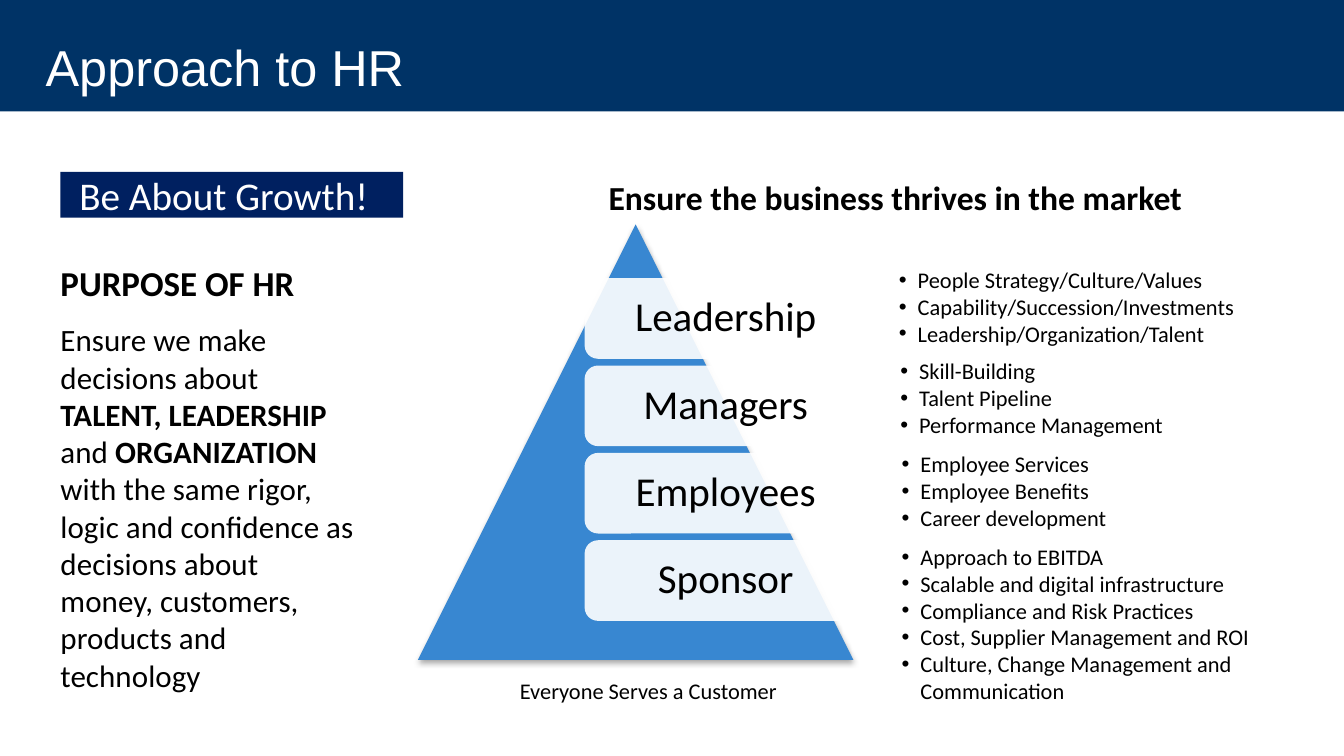
"""Build the "Approach to HR" slide with a four-level pyramid."""
import pptx
import pptx.dml.color
import pptx.enum.shapes
import pptx.enum.text
import pptx.oxml
import pptx.oxml.ns
import pptx.util
from lxml import etree

Inches = pptx.util.Inches
Pt = pptx.util.Pt
RGBColor = pptx.dml.color.RGBColor
SHAPE = pptx.enum.shapes.MSO_SHAPE
ALIGN = pptx.enum.text.PP_ALIGN
ANCHOR = pptx.enum.text.MSO_ANCHOR
qn = pptx.oxml.ns.qn

HEADER_BLUE = RGBColor(0x00, 0x33, 0x66)
BADGE_NAVY = RGBColor(0x00, 0x20, 0x60)
PYRAMID_BLUE = RGBColor(0x38, 0x87, 0xD1)
WHITE = RGBColor(0xFF, 0xFF, 0xFF)
BLACK = RGBColor(0x00, 0x00, 0x00)

deck = pptx.Presentation()
deck.slide_width = Inches(10)
deck.slide_height = Inches(10) * 9 // 16
page = deck.slides.add_slide(deck.slide_layouts[6])


def add_box(left, top, width, height, shape=None, fill=None, margins=(0.1, 0.05)):
    """Add a text box, or a filled preset shape, with side and top margins."""
    place = [Inches(length) for length in (left, top, width, height)]
    if shape is None:
        box = page.shapes.add_textbox(*place)
    else:
        box = page.shapes.add_shape(shape, *place)
        box.shadow.inherit = False
        box.fill.solid()
        box.fill.fore_color.rgb = fill
        box.line.fill.background()
    frame = box.text_frame
    frame.word_wrap = True
    frame.margin_left = frame.margin_right = Inches(margins[0])
    frame.margin_top = frame.margin_bottom = Inches(margins[1])
    return box


def add_span(para, text, size, color=BLACK, bold=False, font="Calibri"):
    """Add one formatted run to a paragraph."""
    span = para.add_run()
    span.text = text
    span.font.name = font
    span.font.size = Pt(size)
    span.font.bold = bold
    span.font.color.rgb = color


add_box(0, 0, 10, 0.83, SHAPE.RECTANGLE, HEADER_BLUE)
title = add_box(0.34, 0.27, 8.07, 0.45, margins=(0, 0))
add_span(title.text_frame.paragraphs[0], "Approach to HR", 27, WHITE, font="Arial")

purpose = add_box(0.45, 1.95, 2.19, 3.24, margins=(0, 0))
add_span(purpose.text_frame.paragraphs[0], "PURPOSE OF HR", 18.7, bold=True)
para = purpose.text_frame.add_paragraph()
para.space_before = Pt(9)
for text, bold in (
    ("Ensure we make decisions about ", False),
    ("TALENT, LEADERSHIP", True),
    (" and ", False),
    ("ORGANIZATION", True),
    (" with the same rigor, logic and confidence as decisions about money, "
     "customers, products and technology", False),
):
    add_span(para, text, 16.65, bold=bold)

badge = add_box(0.45, 1.28, 2.55, 0.34, SHAPE.RECTANGLE, BADGE_NAVY, (0, 0))
badge.text_frame.margin_left = Inches(0.14)
badge.text_frame.vertical_anchor = ANCHOR.MIDDLE
para = badge.text_frame.paragraphs[0]
para.alignment = ALIGN.LEFT
add_span(para, "Be About Growth!", 21, WHITE)

pyramid = add_box(3.11, 1.67, 3.24, 3.24, SHAPE.ISOSCELES_TRIANGLE, PYRAMID_BLUE)
effects = pyramid.element.spPr.find(qn("a:effectLst"))
shadow = etree.SubElement(
    effects, qn("a:outerShdw"), blurRad=str(Pt(3.1)), dist=str(Pt(1.8)),
    dir="5400000", rotWithShape="0")
shade = etree.SubElement(shadow, qn("a:srgbClr"), val=str(BLACK))
etree.SubElement(shade, qn("a:alpha"), val="35000")

for level, name in enumerate(("Leadership", "Managers", "Employees", "Sponsor")):
    band = add_box(4.35, 2.07 + 0.65 * level, 2.1, 0.6,
                   SHAPE.ROUNDED_RECTANGLE, WHITE, (0.09, 0.09))
    tint = band.element.spPr.find(qn("a:solidFill"))[0]
    etree.SubElement(tint, qn("a:alpha"), val="90000")
    band.text_frame.vertical_anchor = ANCHOR.MIDDLE
    para = band.text_frame.paragraphs[0]
    para.alignment = ALIGN.CENTER
    para.line_spacing = 0.9
    add_span(para, name, 22)

headline = add_box(4.43, 1.27, 4.81, 0.4)
add_span(headline.text_frame.paragraphs[0],
         "Ensure the business thrives in the market", 18, bold=True)

caption = add_box(3.77, 4.99, 2.14, 0.3)
caption.text_frame.word_wrap = False
add_span(caption.text_frame.paragraphs[0], "Everyone Serves a Customer", 12)

bullet_groups = (
    (6.59, 1.93, 3.24, 0.71, (
        "People Strategy/Culture/Values",
        "Capability/Succession/Investments",
        "Leadership/Organization/Talent")),
    (6.6, 2.61, 2.58, 0.71, (
        "Skill-Building", "Talent Pipeline", "Performance Management")),
    (6.61, 3.3, 2.05, 0.71, (
        "Employee Services", "Employee Benefits", "Career development")),
    (6.61, 3.99, 3.22, 1.31, (
        "Approach to EBITDA",
        "Scalable and digital infrastructure",
        "Compliance and Risk Practices",
        "Cost, Supplier Management and ROI",
        "Culture, Change Management and Communication")),
)
for *place, items in bullet_groups:
    frame = add_box(*place).text_frame
    for index, item in enumerate(items):
        para = frame.add_paragraph() if index else frame.paragraphs[0]
        props = para._p.get_or_add_pPr()
        props.set("marL", str(Inches(0.14)))
        props.set("indent", str(Inches(-0.14)))
        etree.SubElement(props, qn("a:buFont"), typeface="Arial")
        etree.SubElement(props, qn("a:buChar"), char="•")
        add_span(para, item, 12)

deck.save("out.pptx")
